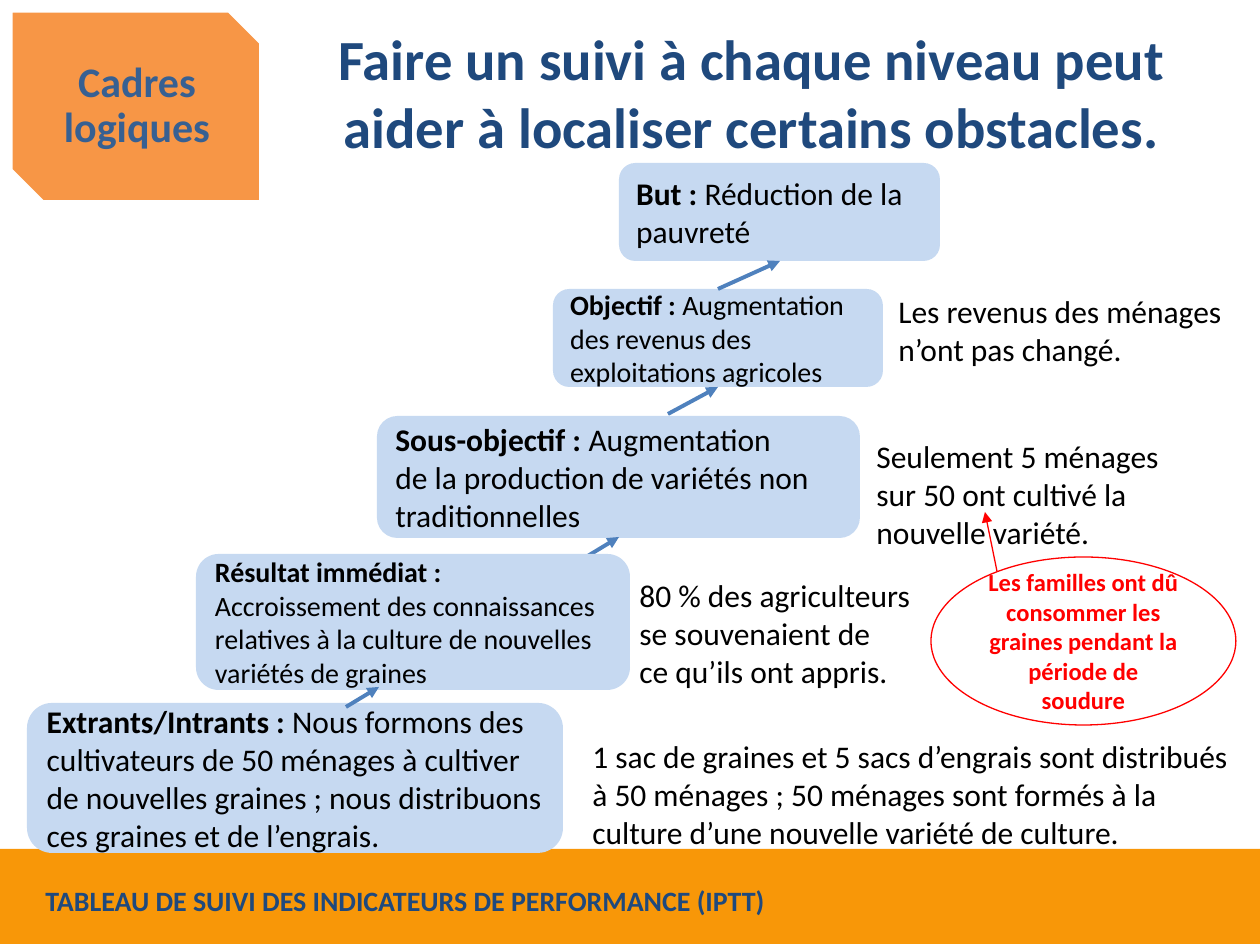
from lxml import etree
from pptx import Presentation
from pptx.dml.color import RGBColor
from pptx.enum.shapes import MSO_CONNECTOR, MSO_SHAPE
from pptx.enum.text import MSO_ANCHOR, PP_ALIGN
from pptx.oxml.ns import qn
from pptx.util import Emu, Pt

PX = 914400 // 126
RECT, ROUND = MSO_SHAPE.RECTANGLE, MSO_SHAPE.ROUNDED_RECTANGLE
OVAL, SNIP = MSO_SHAPE.OVAL, MSO_SHAPE.SNIP_2_DIAG_RECTANGLE
LEFT, CENTER = PP_ALIGN.LEFT, PP_ALIGN.CENTER
TOP, MIDDLE = MSO_ANCHOR.TOP, MSO_ANCHOR.MIDDLE
STRAIGHT = MSO_CONNECTOR.STRAIGHT
COLORS = {
    "footer": "F89708", "navy": "1F497D", "black": "000000", "red": "FF0000",
    "box": "C6D9F1", "arrow": "4F81BD", "tag": "F79646", "steel": "376092",
    "white": "FFFFFF",
}


def color(name):
    return RGBColor.from_string(COLORS[name])


def px(*values):
    return [Emu(value * PX) for value in values]


class Deck:
    font = "Calibri"

    def __init__(self):
        self.prs = Presentation()
        self.prs.slide_width, self.prs.slide_height = px(1260, 945)
        self.slide = self.prs.slides.add_slide(self.prs.slide_layouts[6])

    def style(self, run, size, ink, bold):
        run.font.name, run.font.size = self.font, Pt(size)
        run.font.color.rgb, run.font.bold = color(ink), bold

    def label(self, shape, text, size, ink="black", bold=False, align=LEFT,
              anchor=TOP, lead=""):
        frame = shape.text_frame
        frame.word_wrap, frame.vertical_anchor = True, anchor
        frame.text = text
        for par in frame.paragraphs:
            par.alignment = align
            for run in par.runs:
                self.style(run, size, ink, bold)
        if lead:
            par = frame.paragraphs[0]
            head = par.add_run()
            head.text = lead
            self.style(head, size, ink, True)
            par.runs[0]._r.addprevious(head._r)
        return frame

    def text(self, at, text, size=18, **look):
        box = self.slide.shapes.add_textbox(*px(*at))
        return self.label(box, text, size, **look)

    def shape(self, kind, at, fill=None, line=None, width=1):
        item = self.slide.shapes.add_shape(kind, *px(*at))
        item.shadow.inherit = False
        if fill:
            item.fill.solid()
            item.fill.fore_color.rgb = color(fill)
        else:
            item.fill.background()
        if line:
            item.line.color.rgb, item.line.width = color(line), Pt(width)
        else:
            item.line.fill.background()
        return item

    def level(self, at, lead, text, size=18):
        box = self.shape(ROUND, at, "box")
        self.label(box, text, size, anchor=MIDDLE, lead=lead)

    def arrow(self, start, end, ink="arrow", width=2.25):
        link = self.slide.shapes.add_connector(STRAIGHT, *px(*start, *end))
        link.line.color.rgb, link.line.width = color(ink), Pt(width)
        props = link._element.spPr
        etree.SubElement(props.find(qn("a:ln")), qn("a:tailEnd"), type="triangle")
        etree.SubElement(props, qn("a:effectLst"))


def main():
    deck = Deck()

    # Footer band and title
    deck.shape(RECT, (-1, 849, 1262, 95), "footer")
    deck.text((284, 14, 935, 156),
              "Faire un suivi à chaque niveau peut aider à localiser certains obstacles.",
              32.4, ink="navy", bold=True, align=CENTER, anchor=MIDDLE)

    # Findings beside each level
    deck.text((580, 731, 670, 127),
              "1 sac de graines et 5 sacs d’engrais sont distribués à 50 ménages ; "
              "50 ménages sont formés à la culture d’une nouvelle variété de culture.")
    deck.text((864, 431, 372, 127),
              "Seulement 5 ménages\vsur 50 ont cultivé la nouvelle variété.")
    deck.text((886, 286, 364, 89), "Les revenus des ménages n’ont pas changé.")
    deck.text((627, 570, 372, 127),
              "80 % des agriculteurs\vse souvenaient de\nce qu’ils ont appris.")

    # Obstacle
    deck.arrow((997, 571), (985, 512), "red", 0.75)
    cause = deck.shape(OVAL, (931, 557, 305, 168), line="red", width=0.75)
    deck.label(cause, "Les familles ont dû consommer les graines pendant la période de soudure",
               14, ink="red", bold=True, align=CENTER, anchor=MIDDLE)

    # Levels and the arrows that climb them
    deck.level((27, 703, 536, 150), "Extrants/Intrants : ",
               "Nous formons des cultivateurs de 50 ménages à cultiver de nouvelles "
               "graines ; nous distribuons ces graines et de l’engrais.")
    deck.level((377, 416, 483, 122), "Sous-objectif : ",
               "Augmentation\vde la production de variétés non traditionnelles")
    deck.level((553, 289, 330, 98), "Objectif : ",
               "Augmentation des revenus des exploitations agricoles", 16)
    deck.level((619, 163, 321, 98), "But : ", "Réduction de la pauvreté")
    deck.arrow((718, 289), (780, 261))
    deck.arrow((668, 414), (718, 387))
    deck.arrow((563, 571), (619, 537))
    deck.level((196, 554, 434, 136), "Résultat immédiat : ",
               "Accroissement des connaissances relatives à la culture de nouvelles "
               "variétés de graines", 16)
    deck.arrow((346, 707), (379, 687))

    # Corner tag
    deck.shape(SNIP, (11, 11, 250, 191), "tag", "white", 2)
    tag = deck.text((32, 26, 210, 161), "Cadres logiques", 24, ink="steel",
                    bold=True, align=CENTER, anchor=MIDDLE)
    tag.paragraphs[0].line_spacing = 0.9

    # Footer caption
    deck.text((33, 877, 1113, 49),
              "TABLEAU DE SUIVI DES INDICATEURS DE PERFORMANCE (IPTT)",
              16, ink="navy", bold=True)

    deck.prs.save("out.pptx")


if __name__ == "__main__":
    main()
